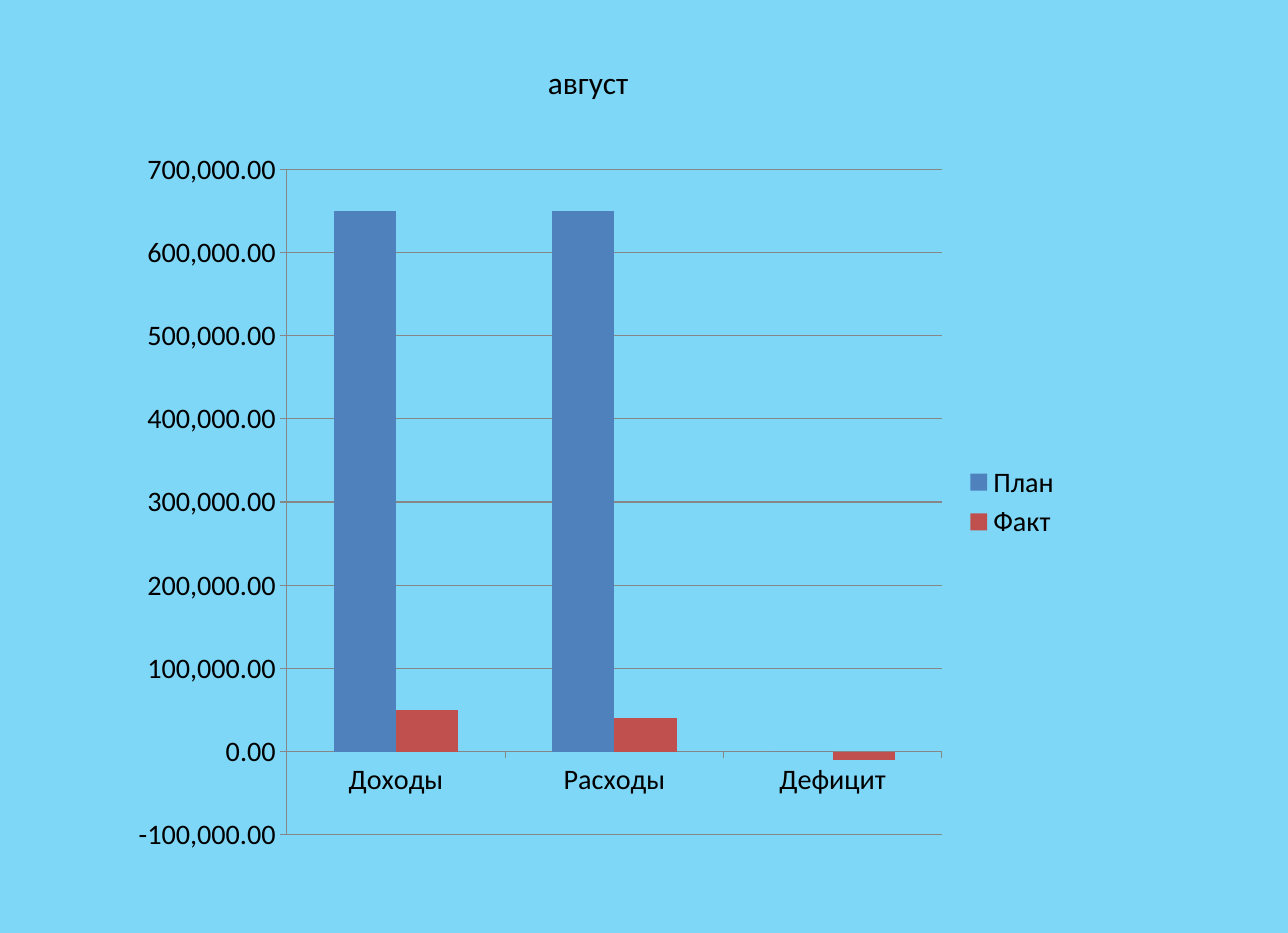
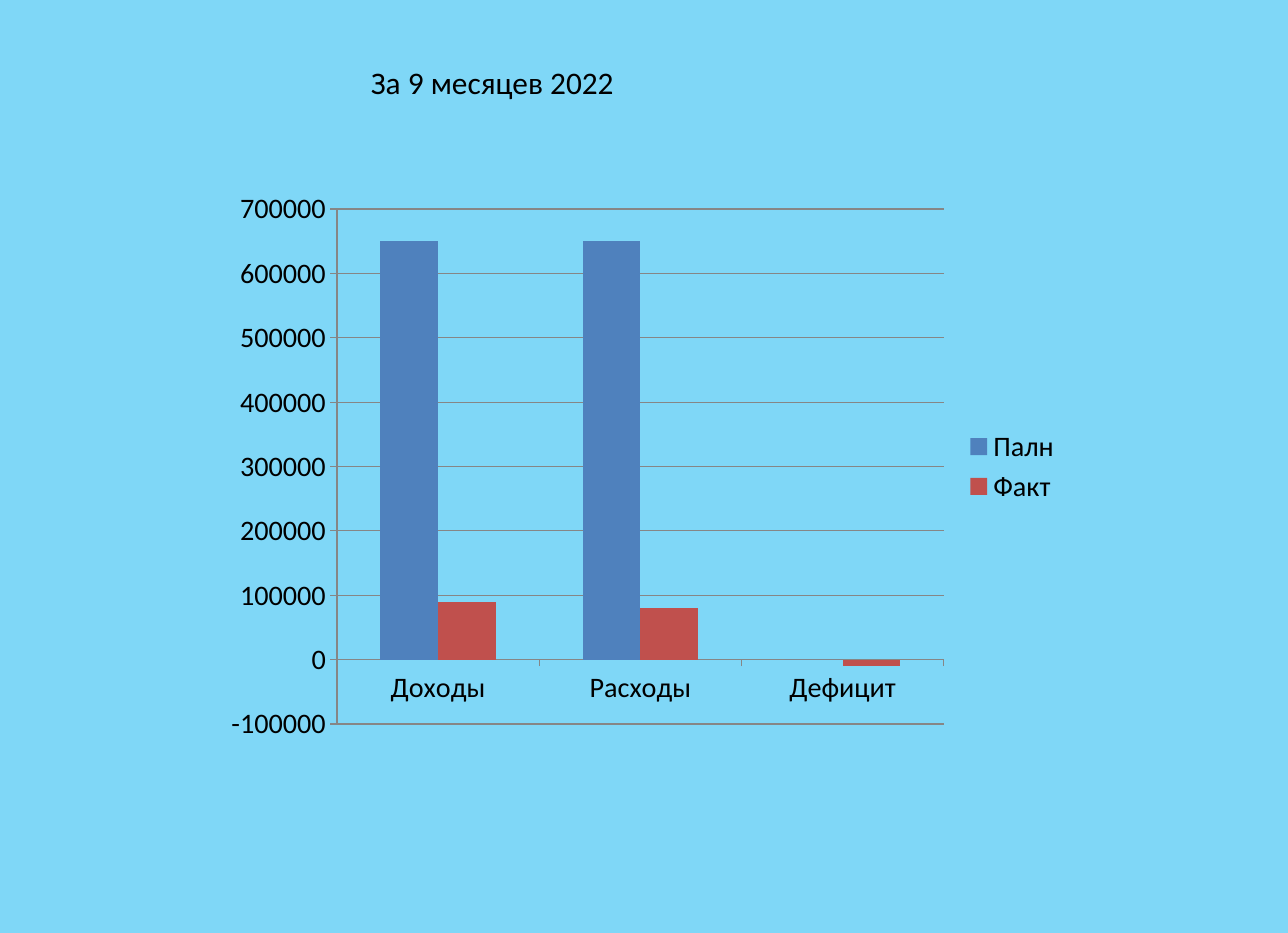
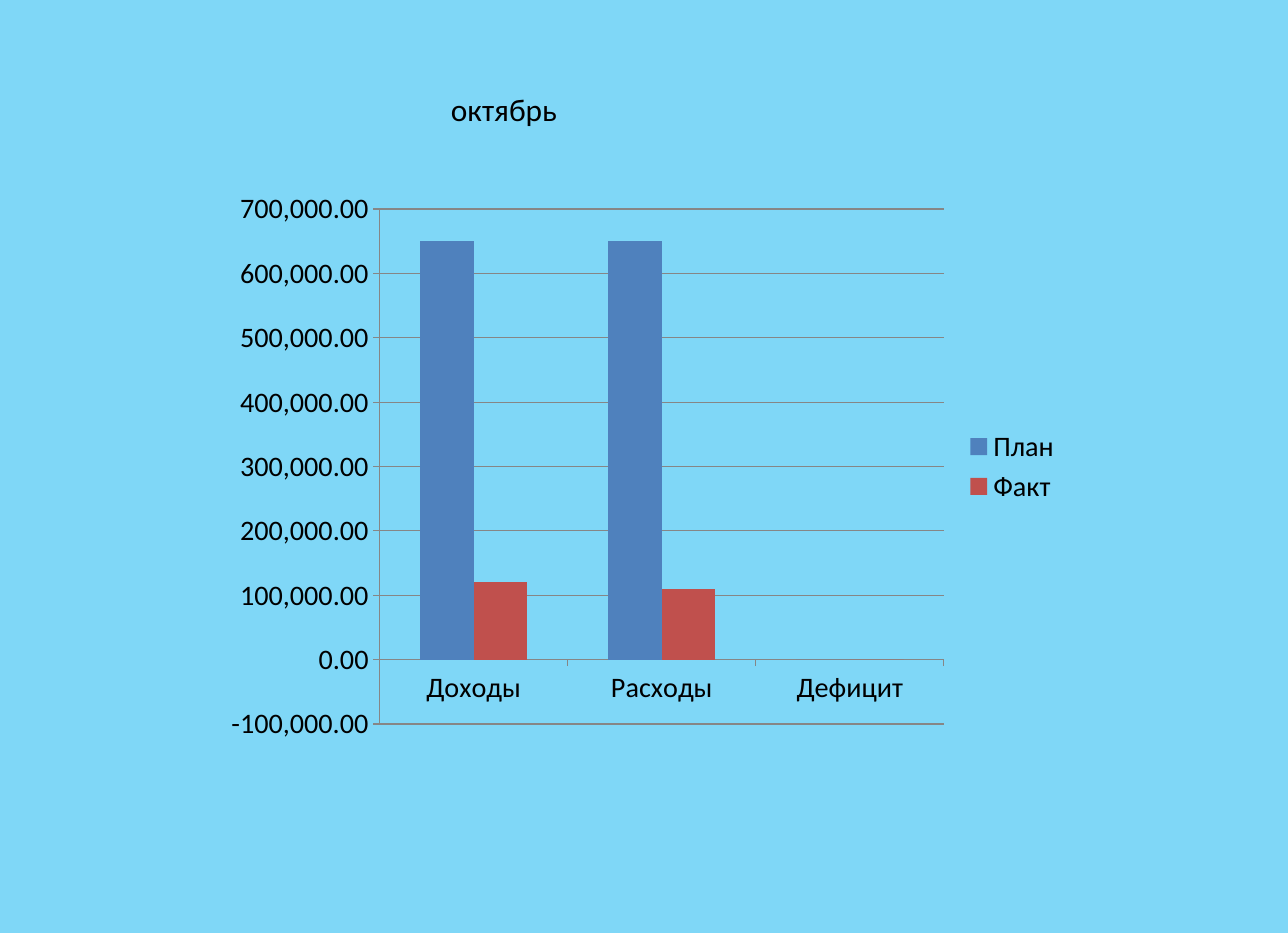
from pptx import Presentation
from pptx.chart.data import CategoryChartData
from pptx.dml.color import RGBColor
from pptx.enum.chart import XL_CHART_TYPE as ChartType, XL_LEGEND_POSITION as LegendPosition, XL_TICK_MARK as TickMark
from pptx.enum.text import MSO_AUTO_SIZE as AutoSize
from pptx.util import Inches, Pt

FONT = "Calibri"
BACKGROUND = "7FD7F7"
TEXT = "000000"
LINE = "868686"
SERIES_COLORS = ["4F81BD", "C0504D"]
CATEGORIES = ["Доходы", "Расходы", "Дефицит"]
PLAN = (650000, 650000, 0)
LARGE_BOX = (1.06, 1.22, 8.45, 6.46)
SMALL_BOX = (1.9, 1.6, 7.61, 5.07)

SLIDES = [
    dict(title="август", title_box=(4.76, 0.51, 0.92, 0.44), wrap=False,
         chart_box=LARGE_BOX, number_format="#,##0.00",
         series={"План": PLAN, "Факт": (50000, 40000, -10000)}),
    dict(title="За 9 месяцев 2022", title_box=(3.19, 0.51, 2.99, 0.44), wrap=True,
         chart_box=SMALL_BOX, number_format="General",
         series={"Палн": PLAN, "Факт": (90000, 80000, -10000)}),
    dict(title="октябрь", title_box=(3.9, 0.75, 1.15, 0.44), wrap=False,
         chart_box=SMALL_BOX, number_format="#,##0.00",
         series={"План": PLAN, "Факт": (120000, 110000, 0)}),
]


def fill_solid(fill, color):
    fill.solid()
    fill.fore_color.rgb = RGBColor.from_string(color)


def style_font(font, size):
    font.name = FONT
    font.size = Pt(size)
    font.color.rgb = RGBColor.from_string(TEXT)


def style_line(line):
    line.color.rgb = RGBColor.from_string(LINE)
    line.width = Pt(0.75)


def add_title(slide, box, text, wrap):
    text_frame = slide.shapes.add_textbox(*map(Inches, box)).text_frame
    text_frame.word_wrap = wrap
    text_frame.auto_size = AutoSize.SHAPE_TO_FIT_TEXT
    text_frame.text = text
    style_font(text_frame.paragraphs[0].runs[0].font, 20)


def add_budget_chart(slide, box, series_values, number_format):
    data = CategoryChartData(number_format=number_format)
    data.categories = CATEGORIES
    for name, values in series_values.items():
        data.add_series(name, values)
    chart = slide.shapes.add_chart(
        ChartType.COLUMN_CLUSTERED, *map(Inches, box), data).chart
    chart.has_title = False
    style_font(chart.font, 18)

    chart.has_legend = True
    chart.legend.position = LegendPosition.RIGHT
    chart.legend.include_in_layout = False

    plot = chart.plots[0]
    plot.vary_by_categories = False
    plot.gap_width = 150
    plot.overlap = 0
    for series, color in zip(plot.series, SERIES_COLORS):
        series.invert_if_negative = False
        fill_solid(series.format.fill, color)

    for axis in (chart.category_axis, chart.value_axis):
        axis.major_tick_mark = TickMark.OUTSIDE
        axis.minor_tick_mark = TickMark.NONE
        style_line(axis.format.line)

    value_axis = chart.value_axis
    value_axis.minimum_scale = -100000
    value_axis.maximum_scale = 700000
    value_axis.major_unit = 100000
    value_axis.has_major_gridlines = True
    style_line(value_axis.major_gridlines.format.line)
    value_axis.tick_labels.number_format = number_format
    value_axis.tick_labels.number_format_is_linked = False


def add_month_slide(presentation, title, title_box, wrap, chart_box, series, number_format):
    slide = presentation.slides.add_slide(presentation.slide_layouts[6])
    fill_solid(slide.background.fill, BACKGROUND)
    add_budget_chart(slide, chart_box, series, number_format)
    add_title(slide, title_box, title, wrap)


def main():
    presentation = Presentation()
    presentation.slide_width = Inches(11.42)
    presentation.slide_height = Inches(8.27)
    for content in SLIDES:
        add_month_slide(presentation, **content)
    presentation.save("out.pptx")


if __name__ == "__main__":
    main()
